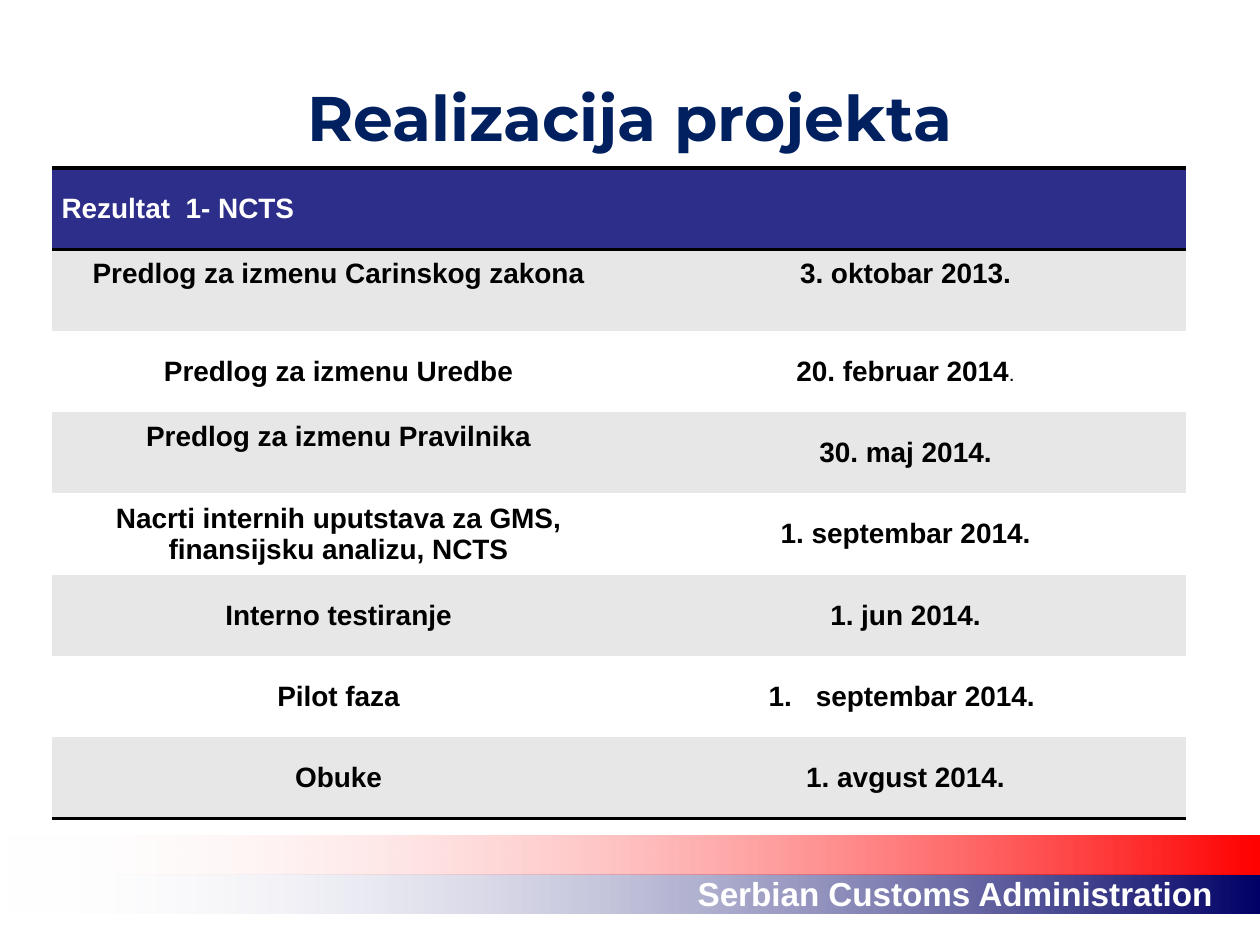
from pptx import Presentation
from pptx.dml.color import RGBColor
from pptx.enum.shapes import MSO_SHAPE
from pptx.enum.text import MSO_ANCHOR, PP_ALIGN
from pptx.oxml.ns import qn
from pptx.util import Pt
from lxml import etree

RECT = MSO_SHAPE.RECTANGLE
MIDDLE = MSO_ANCHOR.MIDDLE
LEFT, CENTER, RIGHT = PP_ALIGN.LEFT, PP_ALIGN.CENTER, PP_ALIGN.RIGHT

HEX = {
    "white": "FFFFFF", "black": "000000", "navy": "000066", "red": "FF0000",
    "title": "002060", "head": "2D2D8A", "band": "E7E7E7",
}
NO_STYLE = "{2D5ABB26-0587-4C30-8999-92F81FD0307C}"
ROWS = [
    ("Rezultat  1- NCTS", ""),
    ("Predlog za izmenu Carinskog zakona", "3. oktobar 2013."),
    ("Predlog za izmenu Uredbe", "20. februar 2014"),
    ("Predlog za izmenu Pravilnika", "30. maj 2014."),
    ("Nacrti internih uputstava za GMS, finansijsku analizu, NCTS",
     "1. septembar 2014."),
    ("Interno testiranje", "1. jun 2014."),
    ("Pilot faza", "septembar 2014. "),
    ("Obuke", "1. avgust 2014."),
]
RAISED = {(1, 0), (1, 1), (3, 0)}
LINE = 18


def rgb(name):
    return RGBColor.from_string(HEX[name])


def style(para, size, color, align, face="Arial"):
    para.alignment = align
    for run in para.runs:
        font = run.font
        font.name, font.size, font.bold = face, Pt(size), True
        font.color.rgb = rgb(color)


def add_bar(slide, top, color):
    bar = slide.shapes.add_shape(RECT, 0, Pt(top), Pt(720), Pt(22.3))
    bar.shadow.inherit = False
    bar.line.fill.background()
    bar.fill.gradient()
    bar.fill.gradient_angle = 0
    for stop, name, pos in zip(bar.fill.gradient_stops, ("white", color), (0, 1)):
        stop.color.rgb = rgb(name)
        stop.position = pos
    first = bar._element.spPr.find(".//" + qn("a:srgbClr"))
    etree.SubElement(first, qn("a:alpha"), val="0")


def add_text(slide, text, area, size, color, align, face="Arial"):
    box = slide.shapes.add_textbox(*[Pt(n) for n in area])
    frame = box.text_frame
    frame.word_wrap = True
    frame.vertical_anchor = MIDDLE
    frame.text = text
    style(frame.paragraphs[0], size, color, align, face)


def add_edge(cell, side):
    line = etree.SubElement(cell._tc.get_or_add_tcPr(), qn("a:" + side), w=str(Pt(2)))
    fill = etree.SubElement(line, qn("a:solidFill"))
    etree.SubElement(fill, qn("a:srgbClr"), val=HEX["black"])


def set_cell(cell, text, row, raised):
    head = row == 0
    cell.margin_left = cell.margin_right = Pt(5.2)
    cell.margin_top = 0
    cell.margin_bottom = Pt(LINE if raised else 0)
    cell.vertical_anchor = MIDDLE
    if head:
        add_edge(cell, "lnT")
    if row in (0, len(ROWS) - 1):
        add_edge(cell, "lnB")
    cell.fill.solid()
    cell.fill.fore_color.rgb = rgb("head" if head else "band" if row % 2 else "white")
    cell.text = text
    style(cell.text_frame.paragraphs[0], 16, "white" if head else "black",
          LEFT if head else CENTER)


def add_number(para):
    props = para._p.get_or_add_pPr()
    props.set("marL", str(Pt(27)))
    props.set("indent", str(Pt(-27)))
    etree.SubElement(props, qn("a:buFont"), typeface="+mj-lt")
    etree.SubElement(props, qn("a:buAutoNum"), type="arabicPeriod")


def add_stop(para):
    run = para.add_run()
    run.text = "."
    run.font.name, run.font.size, run.font.bold = "Arial", Pt(12), False
    run.font.color.rgb = rgb("black")


def add_grid(slide):
    frame = slide.shapes.add_table(len(ROWS), 2, Pt(30), Pt(96), Pt(648), Pt(372))
    grid = frame.table
    grid._tbl.tblPr.find(qn("a:tableStyleId")).text = NO_STYLE
    for col, width in zip(grid.columns, (327, 321)):
        col.width = Pt(width)
    for r, texts in enumerate(ROWS):
        grid.rows[r].height = Pt(46.5)
        for c, text in enumerate(texts):
            set_cell(grid.cell(r, c), text, r, (r, c) in RAISED)
    add_stop(grid.cell(2, 1).text_frame.paragraphs[0])
    add_number(grid.cell(6, 1).text_frame.paragraphs[0])


def main():
    deck = Presentation()
    deck.slide_width, deck.slide_height = Pt(720), Pt(540)
    slide = deck.slides.add_slide(deck.slide_layouts[6])
    add_bar(slide, 499.7, "navy")
    add_bar(slide, 477.4, "red")
    add_text(slide, "Serbian Customs Administration", (358, 495.5, 342, 30),
             19, "white", RIGHT)
    add_text(slide, "Realizacija projekta", (36, 21.6, 648, 90),
             36, "title", CENTER, "Montserrat")
    add_grid(slide)
    deck.save("out.pptx")


if __name__ == "__main__":
    main()
